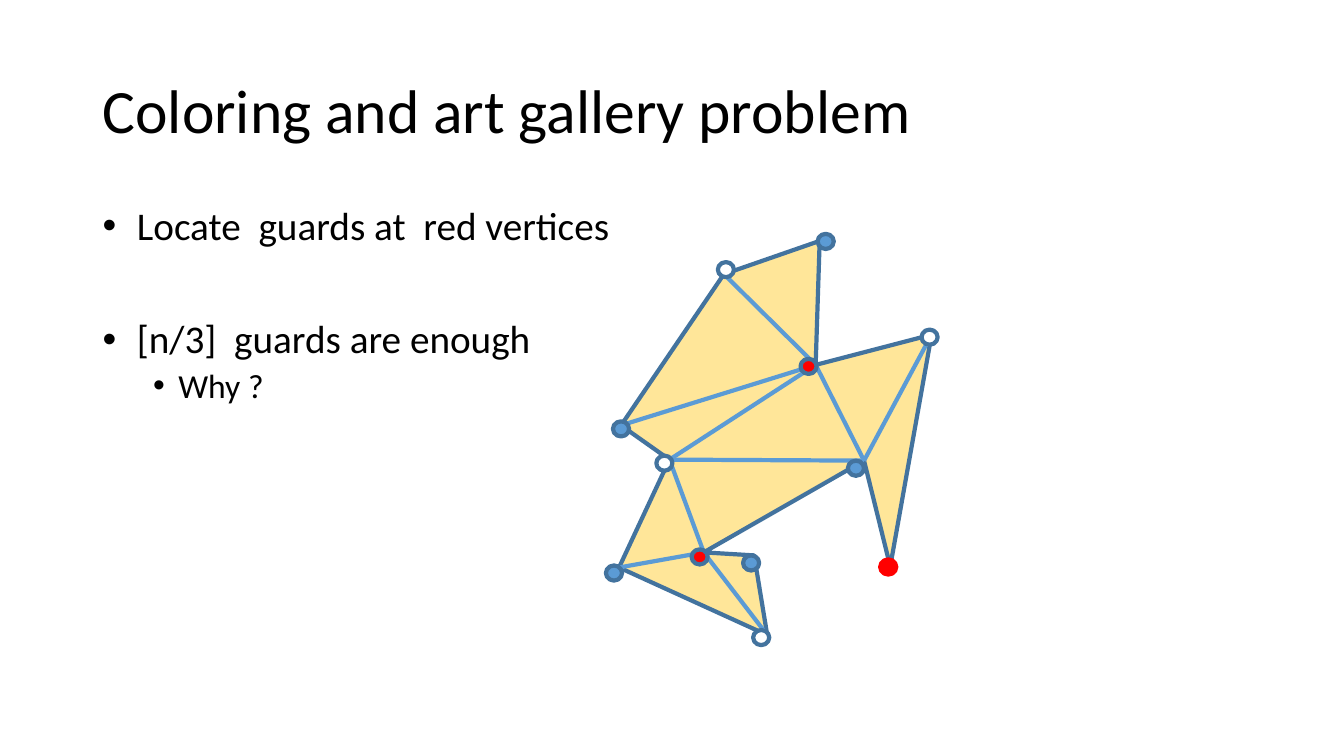
from pptx import Presentation
from pptx.dml.color import RGBColor
from pptx.enum.shapes import MSO_CONNECTOR, MSO_SHAPE
from pptx.enum.text import MSO_ANCHOR
from pptx.oxml.ns import qn
from pptx.util import Inches, Pt
from lxml.etree import SubElement

FONT = "Calibri"
BLACK, WHITE, RED = "000000", "FFFFFF", "FF0000"
BLUE, DARK_BLUE, SAND = "5B9BD5", "43739E", "FFE699"
LINE_WIDTH = 3
DOT_SIZE = (0.16, 0.15)

# Polygon order; corner, then top left of its dot, measured from the diagram box
VERTICES = {
    "upper left": ((1.18, 0.42), (1.12, 0.30), WHITE),
    "far left": ((0.16, 1.92), (0.08, 1.88), BLUE),
    "left notch": ((0.64, 2.26), (0.51, 2.22), WHITE),
    "lower left": ((0.14, 3.33), (0.01, 3.31), BLUE),
    "bottom": ((1.61, 4.00), (1.47, 3.95), WHITE),
    "lower right": ((1.48, 3.21), (1.37, 3.21), BLUE),
    "lower notch": ((0.98, 3.18), (0.86, 3.15), RED),
    "right notch": ((2.57, 2.27), (2.41, 2.27), BLUE),
    "spike": ((2.83, 3.32), (2.73, 3.25), RED),
    "far right": ((3.24, 1.02), (3.14, 0.97), WHITE),
    "upper notch": ((2.09, 1.32), (1.94, 1.26), RED),
    "top": ((2.13, 0.09), (2.11, 0.02), BLUE),
}
DIAGONALS = [
    ("upper left", "upper notch"),
    ("far left", "upper notch"),
    ("upper notch", "right notch"),
    ("right notch", "far right"),
    ("left notch", "upper notch"),
    ("left notch", "right notch"),
    ("left notch", "lower notch"),
    ("lower notch", "lower left"),
    ("lower notch", "bottom"),
]

# text, level, size, left margin, hanging indent, space before
POINTS = [
    ("Locate  guards at  red vertices", 0, 28, 0.34, 0.34, 10),
    ("[n/3]  guards are enough", 0, 28, 0.34, 0.34, 50.75),
    ("Why ?", 1, 24, 0.75, 0.25, 5),
]


def color(hex_value):
    return RGBColor.from_string(hex_value)


def set_values(target, values):
    for name, value in values.items():
        setattr(target, name, value)


def style_line(line, hex_value):
    line.color.rgb = color(hex_value)
    line.width = Pt(LINE_WIDTH)


def style_shape(shape, fill, outline):
    shape.shadow.inherit = False
    shape.fill.solid()
    shape.fill.fore_color.rgb = color(fill)
    style_line(shape.line, outline)


def add_text_frame(slide, box, anchor):
    frame = slide.shapes.add_textbox(*map(Inches, box)).text_frame
    set_values(frame, {"word_wrap": True, "vertical_anchor": anchor})
    return frame


def write(paragraph, text, size, space_before=0):
    set_values(paragraph, {"line_spacing": 0.9, "space_before": Pt(space_before)})
    run = paragraph.add_run()
    run.text = text
    set_values(run.font, {"name": FONT, "size": Pt(size)})
    run.font.color.rgb = color(BLACK)


def add_bullet(paragraph, margin, hanging):
    properties = paragraph._p.get_or_add_pPr()
    properties.set("marL", str(Inches(margin)))
    properties.set("indent", str(-Inches(hanging)))
    SubElement(properties, qn("a:buFont"), typeface="Arial")
    SubElement(properties, qn("a:buChar"), char="•")


def add_title(slide, box):
    frame = add_text_frame(slide, box, MSO_ANCHOR.MIDDLE)
    write(frame.paragraphs[0], "Coloring and art gallery problem", 44)


def add_points(slide, box):
    frame = add_text_frame(slide, box, MSO_ANCHOR.TOP)
    for index, (text, level, size, margin, hanging, before) in enumerate(POINTS):
        point = frame.add_paragraph() if index else frame.paragraphs[0]
        point.level = level
        write(point, text, size, before)
        add_bullet(point, margin, hanging)


def add_gallery(slide, left, top):
    """Draw the triangulated gallery with a three-coloring of its vertices."""
    def place(offset):
        return Inches(left + offset[0]), Inches(top + offset[1])

    corners = {name: place(corner) for name, (corner, _, _) in VERTICES.items()}
    first, *others = corners.values()
    outline = slide.shapes.build_freeform(*first, scale=1.0)
    outline.add_line_segments(others, close=True)
    style_shape(outline.convert_to_shape(), SAND, DARK_BLUE)

    for start, end in DIAGONALS:
        diagonal = slide.shapes.add_connector(
            MSO_CONNECTOR.STRAIGHT, *corners[start], *corners[end])
        style_line(diagonal.line, BLUE)
        SubElement(diagonal._element.spPr, qn("a:effectLst"))

    for name, (_, dot_offset, fill) in VERTICES.items():
        dot = slide.shapes.add_shape(
            MSO_SHAPE.OVAL, *place(dot_offset), *map(Inches, DOT_SIZE))
        style_shape(dot, fill, RED if name == "spike" else DARK_BLUE)


def main():
    deck = Presentation()
    set_values(deck, {"slide_width": Inches(13.33), "slide_height": Inches(7.5)})
    slide = deck.slides.add_slide(deck.slide_layouts[6])
    add_title(slide, (0.92, 0.4, 11.5, 1.45))
    add_points(slide, (0.92, 2, 11.5, 4.76))
    add_gallery(slide, 6, 2.3)
    deck.save("out.pptx")


if __name__ == "__main__":
    main()
